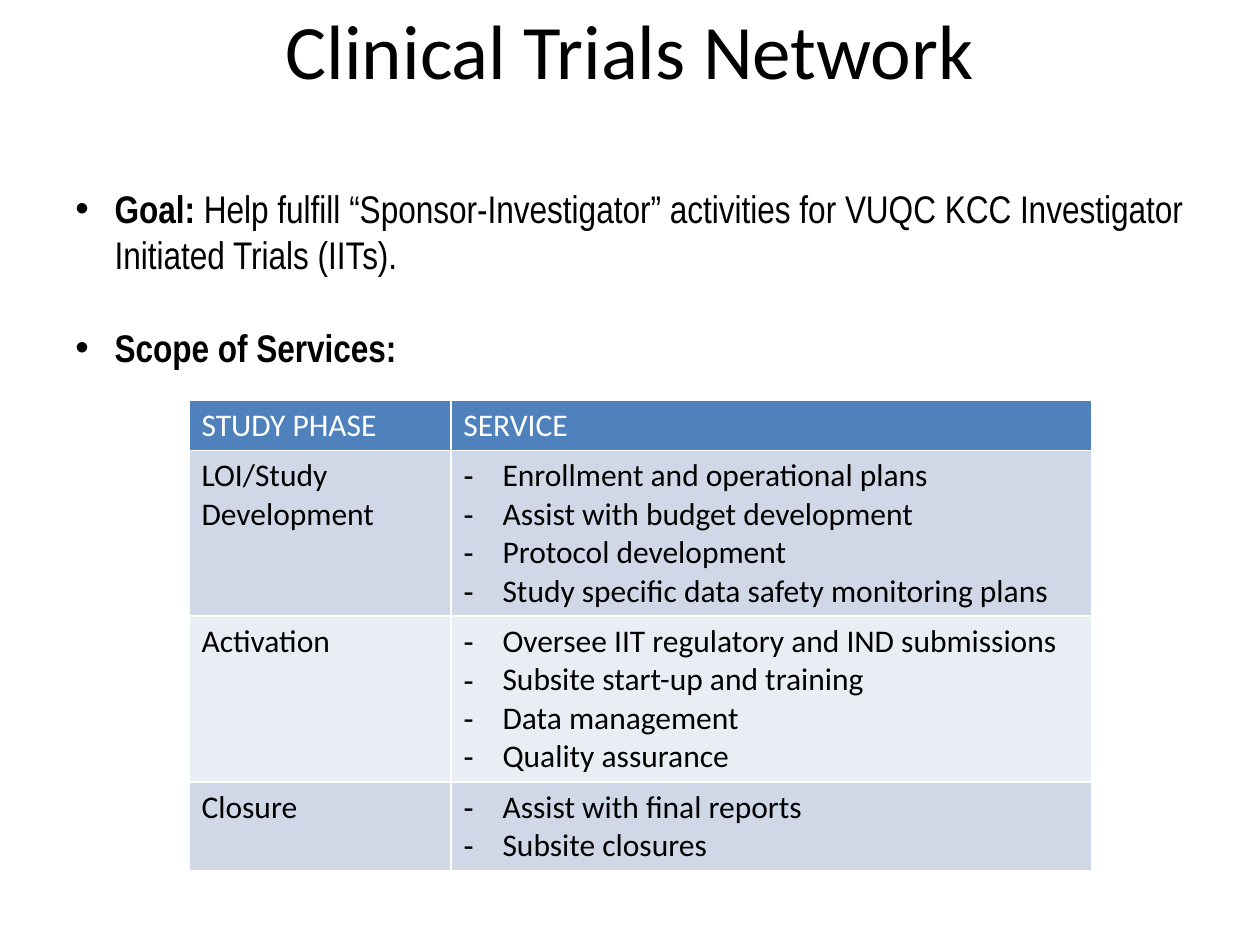
import pptx
import pptx.dml.color
import pptx.enum.text
import pptx.oxml.ns
import pptx.util
from lxml import etree

Cm = pptx.util.Cm
Pt = pptx.util.Pt
RGBColor = pptx.dml.color.RGBColor

BLACK = RGBColor(0x00, 0x00, 0x00)
WHITE = RGBColor(0xFF, 0xFF, 0xFF)
HEADER_BLUE = RGBColor(0x4F, 0x81, 0xBD)
BAND_FILLS = (RGBColor(0xD0, 0xD8, 0xE8), RGBColor(0xE9, 0xED, 0xF4))

HANGING_INDENT = Cm(0.79)

HEADINGS = ("STUDY PHASE", "SERVICE")
PHASES = (
    ("LOI/Study Development", (
        "Enrollment and operational plans",
        "Assist with budget development",
        "Protocol development",
        "Study specific data safety monitoring plans",
    )),
    ("Activation", (
        "Oversee IIT regulatory and IND submissions",
        "Subsite start-up and training",
        "Data management",
        "Quality assurance",
    )),
    ("Closure", (
        "Assist with final reports",
        "Subsite closures",
    )),
)
POINTS = (
    ("Goal: ", "Help fulfill “Sponsor-Investigator” activities for VUQC KCC "
               "Investigator Initiated Trials (IITs)."),
    ("Scope of Services:", ""),
)


def set_font(paragraph, name, size, color):
    font = paragraph.font
    font.name = name
    font.size = Pt(size)
    font.bold = False
    font.color.rgb = color


def add_bullet(paragraph, character):
    properties = paragraph._p.get_or_add_pPr()
    properties.set("marL", str(HANGING_INDENT))
    properties.set("indent", str(-HANGING_INDENT))
    # Bullet elements must come before the default run properties.
    for position, (tag, attribute, value) in enumerate((
        ("a:buFont", "typeface", "Arial"),
        ("a:buChar", "char", character),
    )):
        bullet = etree.Element(pptx.oxml.ns.qn(tag))
        bullet.set(attribute, value)
        defaults = properties.find(pptx.oxml.ns.qn("a:defRPr"))
        properties.insert(properties.index(defaults) + 0 * position, bullet)


def add_text_frame(slide, left, top, width, height):
    text_frame = slide.shapes.add_textbox(left, top, width, height).text_frame
    text_frame.word_wrap = True
    return text_frame


def add_title(slide, left, top, width, height):
    text_frame = add_text_frame(slide, left, top, width, height)
    text_frame.margin_top = text_frame.margin_bottom = 0
    paragraph = text_frame.paragraphs[0]
    paragraph.text = "Clinical Trials Network"
    paragraph.alignment = pptx.enum.text.PP_ALIGN.CENTER
    set_font(paragraph, "Calibri", 44, BLACK)


def add_points(slide, left, top, width, height):
    text_frame = add_text_frame(slide, left, top, width, height)
    for index, (label, detail) in enumerate(POINTS):
        paragraph = text_frame.add_paragraph() if index else text_frame.paragraphs[0]
        set_font(paragraph, "Arial Narrow", 22, BLACK)
        add_bullet(paragraph, "•")
        if index:
            paragraph.space_before = Pt(26.3)
        label_run = paragraph.add_run()
        label_run.text = label
        label_run.font.bold = True
        if detail:
            paragraph.add_run().text = detail


def fill_cell(cell, lines, fill, color, bullet=None):
    cell.fill.solid()
    cell.fill.fore_color.rgb = fill
    cell.text = "\n".join(lines)
    for paragraph in cell.text_frame.paragraphs:
        set_font(paragraph, "Calibri", 18, color)
        if bullet:
            add_bullet(paragraph, bullet)


def add_service_table(slide, left, top, width, height):
    """Phase column takes 29 % of the width; row heights follow the line counts."""
    table = slide.shapes.add_table(
        len(PHASES) + 1, len(HEADINGS), left, top, width, height).table
    phase_width = int(width * 0.29)
    table.columns[0].width = phase_width
    table.columns[1].width = width - phase_width

    line_counts = [1] + [len(services) for _, services in PHASES]
    padding = Cm(0.25)
    line_height = (height - padding * len(line_counts)) / sum(line_counts)
    for row, count in zip(table.rows, line_counts):
        row.height = int(padding + count * line_height)

    for column, heading in enumerate(HEADINGS):
        fill_cell(table.cell(0, column), [heading], HEADER_BLUE, WHITE)
    for index, (phase, services) in enumerate(PHASES):
        fill = BAND_FILLS[index % 2]
        fill_cell(table.cell(index + 1, 0), [phase], fill, BLACK)
        fill_cell(table.cell(index + 1, 1), services, fill, BLACK, bullet="-")


def main():
    presentation = pptx.Presentation()
    presentation.slide_width = Cm(25.4)
    presentation.slide_height = Cm(19.05)
    slide = presentation.slides.add_slide(presentation.slide_layouts[6])
    add_title(slide, Cm(1.27), Cm(0.05), Cm(22.86), Cm(3.12))
    add_points(slide, Cm(1.27), Cm(3.61), Cm(22.86), Cm(4.4))
    add_service_table(slide, Cm(3.81), Cm(8.06), Cm(18.2), Cm(9.5))
    presentation.save("out.pptx")


if __name__ == "__main__":
    main()
